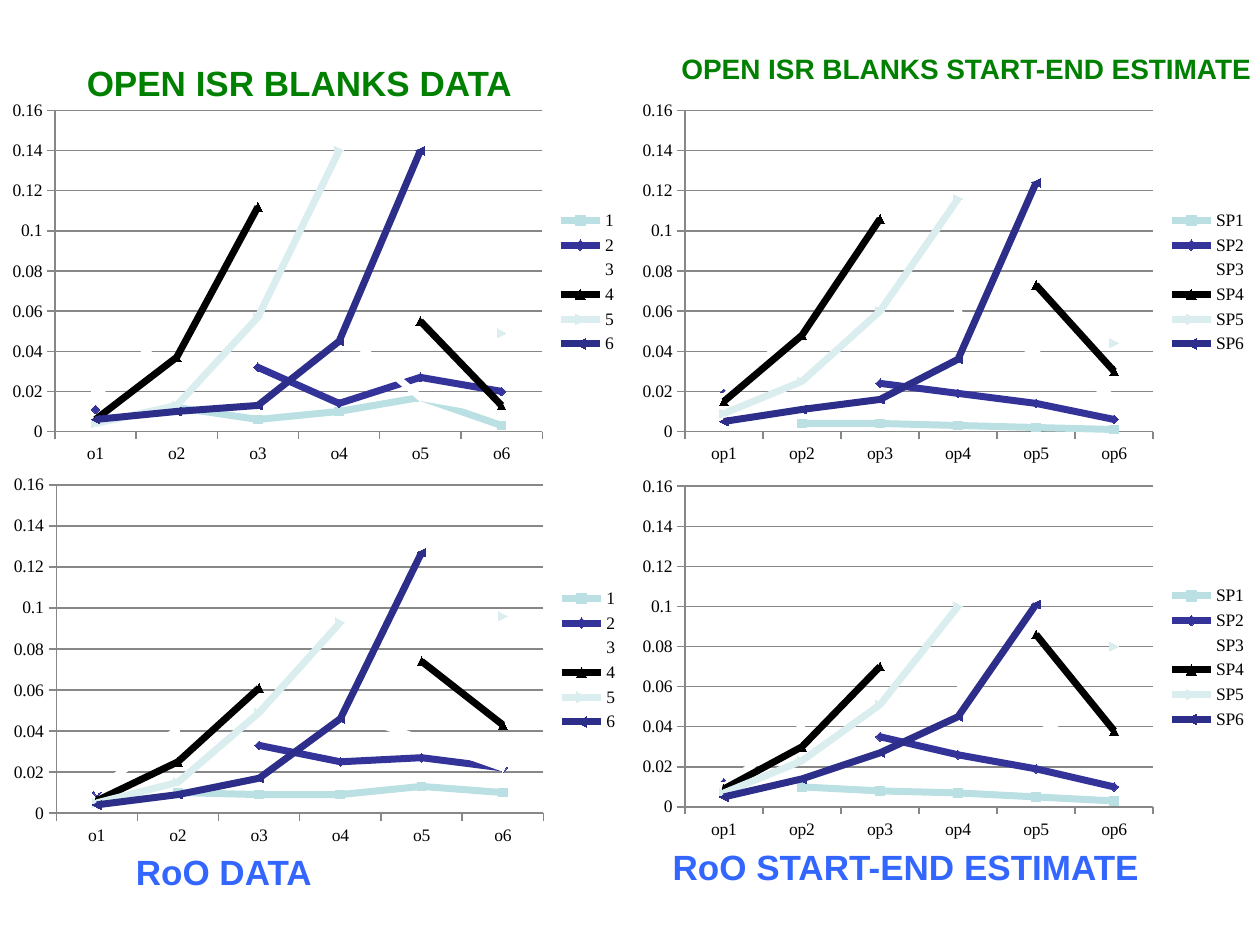
from pptx import Presentation, util as u
from pptx.chart.data import CategoryChartData
from pptx.dml.color import RGBColor
from pptx.enum import chart as c, text

BLACK = RGBColor(0x00, 0x00, 0x00)
GRAY = RGBColor(0x87, 0x87, 0x87)
GREEN = RGBColor(0x00, 0x80, 0x00)
BLUE = RGBColor(0x33, 0x66, 0xFF)
SERIES_COLORS = [
    RGBColor(0xBB, 0xE0, 0xE3), RGBColor(0x33, 0x33, 0x99),
    RGBColor(0xFF, 0xFF, 0xFF), BLACK,
    RGBColor(0xDA, 0xED, 0xEF), RGBColor(0x2D, 0x2D, 0x8A),
]

BLANKS_ESTIMATE = [
    [None, 0.004, 0.004, 0.003, 0.002, 0.001],
    [0.019, None, 0.024, 0.019, 0.014, 0.006],
    [0.017, 0.054, None, 0.059, 0.039, 0.017],
    [0.015, 0.048, 0.106, None, 0.073, 0.03],
    [0.009, 0.025, 0.06, 0.116, None, 0.044],
    [0.005, 0.011, 0.016, 0.036, 0.124, None],
]
ROO_ESTIMATE = [
    [None, 0.01, 0.008, 0.007, 0.005, 0.003],
    [0.012, None, 0.035, 0.026, 0.019, 0.01],
    [0.01, 0.04, None, 0.062, 0.044, 0.023],
    [0.009, 0.03, 0.07, None, 0.086, 0.038],
    [0.007, 0.023, 0.051, 0.1, None, 0.08],
    [0.005, 0.014, 0.027, 0.045, 0.101, None],
]
BLANKS_DATA = [
    [None, 0.012, 0.006, 0.01, 0.017, 0.003],
    [0.011, None, 0.032, 0.014, 0.027, 0.02],
    [0.018, 0.053, None, 0.051, 0.017, 0.01],
    [0.006, 0.037, 0.112, None, 0.055, 0.013],
    [0.004, 0.013, 0.057, 0.14, None, 0.049],
    [0.006, 0.01, 0.013, 0.045, 0.14, None],
]
ROO_DATA = [
    [None, 0.01, 0.009, 0.009, 0.013, 0.01],
    [0.01, None, 0.033, 0.025, 0.027, 0.022],
    [0.011, 0.041, None, 0.05, 0.036, 0.022],
    [0.006, 0.025, 0.061, None, 0.074, 0.043],
    [0.005, 0.015, 0.049, 0.093, None, 0.096],
    [0.004, 0.009, 0.017, 0.046, 0.127, None],
]

CHARTS = [
    ((5, 0.74, 5, 3), "op", "SP", BLANKS_ESTIMATE),
    ((5, 3.72, 5, 3), "op", "SP", ROO_ESTIMATE),
    ((0, 0.74, 5, 3), "o", "", BLANKS_DATA),
    ((0.01, 3.71, 5, 3.06), "o", "", ROO_DATA),
]
HEADINGS = [
    ((0.59, 0.44, 3.59, 0.44), "OPEN ISR BLANKS DATA", 20, GREEN),
    ((5.31, 0.36, 4.78, 0.37), "OPEN ISR BLANKS START-END ESTIMATE", 16, GREEN),
    ((0.98, 6.7, 1.6, 0.44), "RoO DATA", 20, BLUE),
    ((5.24, 6.66, 3.93, 0.44), "RoO START-END ESTIMATE", 20, BLUE),
]


def apply_format(target, values):
    """Set each named attribute of the target."""
    for name, value in values.items():
        setattr(target, name, value)


def format_font(font, color, values):
    """Set the colour and the other values of a font."""
    apply_format(font, values)
    font.color.rgb = color


def format_line(line, color, width):
    """Give a line a solid colour and a width in points."""
    line.color.rgb = color
    line.width = u.Pt(width)


def format_axes(chart):
    """Set the scale, ticks and gray lines of both axes."""
    apply_format(chart.value_axis, {
        "minimum_scale": 0, "maximum_scale": 0.16, "major_unit": 0.02,
        "has_major_gridlines": True})
    format_line(chart.value_axis.major_gridlines.format.line, GRAY, 0.75)
    for axis in (chart.category_axis, chart.value_axis):
        axis.major_tick_mark = c.XL_TICK_MARK.OUTSIDE
        format_line(axis.format.line, GRAY, 0.75)


def format_series(series, color):
    """Colour the line and the markers of a series."""
    series.smooth = False
    format_line(series.format.line, color, 4)
    series.marker.format.fill.solid()
    series.marker.format.fill.fore_color.rgb = color
    format_line(series.marker.format.line, color, 0.75)


def add_line_chart(slide, box, category_prefix, series_prefix, rows):
    """Add a line chart with numbered categories and series."""
    data = CategoryChartData()
    data.categories = [f"{category_prefix}{n}" for n in range(1, 7)]
    for number, values in enumerate(rows, 1):
        data.add_series(f"{series_prefix}{number}", values)
    chart = slide.shapes.add_chart(
        c.XL_CHART_TYPE.LINE_MARKERS, *map(u.Inches, box), data).chart
    apply_format(chart, {"has_title": False, "has_legend": True})
    format_font(chart.font, BLACK, {"name": "Times New Roman", "size": u.Pt(10)})
    apply_format(chart.legend, {
        "position": c.XL_LEGEND_POSITION.RIGHT, "include_in_layout": False})
    format_axes(chart)
    chart.plots[0].vary_by_categories = False
    for series, color in zip(chart.plots[0].series, SERIES_COLORS):
        format_series(series, color)


def add_heading(slide, box, words, size, color):
    """Add a bold one-line heading."""
    frame = slide.shapes.add_textbox(*map(u.Inches, box)).text_frame
    apply_format(frame, {
        "word_wrap": False, "auto_size": text.MSO_AUTO_SIZE.SHAPE_TO_FIT_TEXT})
    run = frame.paragraphs[0].add_run()
    run.text = words
    format_font(run.font, color, {"name": "Arial", "size": u.Pt(size), "bold": True})


def main():
    """Build the slide and save it."""
    presentation = Presentation()
    apply_format(presentation, {
        "slide_width": u.Inches(10), "slide_height": u.Inches(7.5)})
    slide = presentation.slides.add_slide(presentation.slide_layouts[6])
    for chart in CHARTS:
        add_line_chart(slide, *chart)
    for heading in HEADINGS:
        add_heading(slide, *heading)
    presentation.save("out.pptx")


if __name__ == "__main__":
    main()
